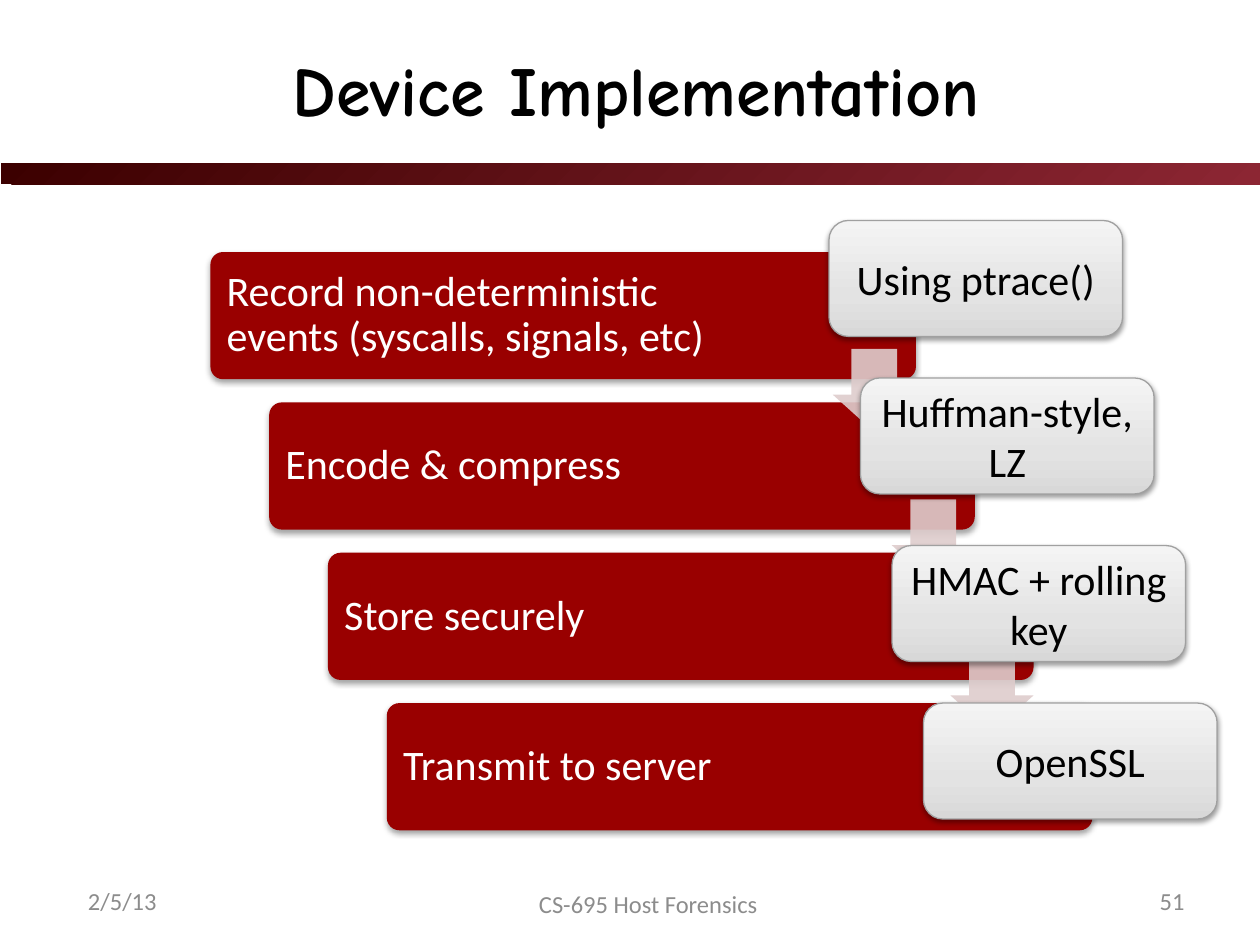
from dataclasses import dataclass

import pptx
import pptx.dml.color
import pptx.enum.shapes
import pptx.enum.text
import pptx.oxml
import pptx.oxml.ns
import pptx.util
from pptx.util import Inches

SHAPE = pptx.enum.shapes.MSO_SHAPE
ALIGN = pptx.enum.text.PP_ALIGN
COLORS = {
    "black": "000000",
    "white": "FFFFFF",
    "step": "990000",
    "arrow": "DECCCC",
    "footer": "8C8C8C",
    "note_line": "A0A0A0",
}
BAND_STOPS = [(0, "3C0000"), (100, "8C2633")]
NOTE_STOPS = [(0, "D8D8D8"), (35, "E3E3E3"), (100, "F4F4F4")]


@dataclass
class Area:
    left: float
    top: float
    width: float
    height: float

    def lengths(self) -> list:
        return [Inches(v) for v in (self.left, self.top, self.width, self.height)]


@dataclass
class Label:
    text: str
    area: Area
    size: int
    color: str
    align: object
    font: str = "Calibri"
    bold: bool = False


@dataclass
class Stage:
    step: str
    note: str
    note_top: float


STAGES = [
    Stage("Record non-deterministic events (syscalls, signals, etc)", "Using ptrace()", 1.75),
    Stage("Encode & compress", "Huffman-style, LZ", 3),
    Stage("Store securely", "HMAC + rolling key", 4.33),
    Stage("Transmit to server", "OpenSSL", 5.58),
]
LABELS = [
    Label("Device Implementation", Area(0.6, 0.15, 8.9, 1.1), 40, "black",
          ALIGN.CENTER, "Comic Neue", True),
    Label("2/5/13", Area(0.6, 6.95, 1.83, 0.4), 14, "footer", ALIGN.LEFT),
    Label("CS-695 Host Forensics", Area(3.9, 6.97, 2.49, 0.4), 14, "footer", ALIGN.CENTER),
    Label("51", Area(7.67, 6.95, 1.83, 0.4), 14, "footer", ALIGN.RIGHT),
]
STEP_LEFT, STEP_TOP = 1.67, 2
STEP_RIGHT, STEP_DOWN = 1.4 / 3, 3.58 / 3


def rgb(name: str) -> pptx.dml.color.RGBColor:
    return pptx.dml.color.RGBColor.from_string(COLORS[name])


def parse_drawing(markup: str):
    return pptx.oxml.parse_xml(markup.replace(">", f" {pptx.oxml.ns.nsdecls('a')}>", 1))


def write(shape, text: str, size: int, color: str, align, font: str = "Calibri",
          bold: bool = False, spacing: float = 1.0) -> None:
    frame = shape.text_frame
    frame.word_wrap = True
    frame.vertical_anchor = pptx.enum.text.MSO_ANCHOR.MIDDLE
    para = frame.paragraphs[0]
    para.alignment = align
    para.line_spacing = spacing
    span = para.add_run()
    span.text = text
    span.font.color.rgb = rgb(color)
    formats = {"name": font, "size": pptx.util.Pt(size), "bold": bold}
    for attribute, value in formats.items():
        setattr(span.font, attribute, value)


def add_plain(page, kind, area: Area, fill: str, adjustments: tuple = ()):
    shape = page.shapes.add_shape(kind, *area.lengths())
    shape.shadow.inherit = False
    shape.fill.solid()
    shape.fill.fore_color.rgb = rgb(fill)
    shape.line.fill.background()
    for index, value in enumerate(adjustments):
        shape.adjustments[index] = value
    return shape


def set_gradient(shape, stops: list, angle: int) -> None:
    marks = "".join(
        f'<a:gs pos="{position * 1000}"><a:srgbClr val="{color}"/></a:gs>'
        for position, color in stops
    )
    gradient = parse_drawing(
        f'<a:gradFill rotWithShape="1"><a:gsLst>{marks}</a:gsLst>'
        f'<a:lin ang="{angle * 60000}" scaled="0"/></a:gradFill>'
    )
    solid = shape.fill._xPr.find(pptx.oxml.ns.qn("a:solidFill"))
    solid.getparent().replace(solid, gradient)


def set_shadow(shape, opacity: int, distance: float) -> None:
    effects = shape._element.spPr.find(pptx.oxml.ns.qn("a:effectLst"))
    effects.append(parse_drawing(
        f'<a:outerShdw blurRad="{pptx.util.Pt(3.1)}" dist="{pptx.util.Pt(distance)}" '
        f'dir="5400000" rotWithShape="0"><a:srgbClr val="{COLORS["black"]}">'
        f'<a:alpha val="{opacity * 1000}"/></a:srgbClr></a:outerShdw>'
    ))


def add_band(page) -> None:
    band = add_plain(page, SHAPE.RECTANGLE, Area(4.92, -3.62, 0.17, 10), "step")
    band.rotation = 90
    set_gradient(band, BAND_STOPS, 315)


def add_label(page, label: Label) -> None:
    box = page.shapes.add_textbox(*label.area.lengths())
    write(box, label.text, label.size, label.color, label.align, label.font, label.bold)


def add_step(page, index: int, text: str) -> None:
    left, top = STEP_LEFT + index * STEP_RIGHT, STEP_TOP + index * STEP_DOWN
    card = add_plain(page, SHAPE.ROUNDED_RECTANGLE, Area(left, top, 5.6, 1.01), "step", (0.1,))
    set_shadow(card, 35, 1.8)
    box = page.shapes.add_textbox(*Area(left + 0.03, top + 0.03, 4.42, 0.95).lengths())
    for side in ("left", "top", "right", "bottom"):
        setattr(box.text_frame, f"margin_{side}", Inches(0.1))
    write(box, text, 24, "white", ALIGN.LEFT, spacing=0.9)


def add_arrow(page, index: int) -> None:
    area = Area(6.61 + index * STEP_RIGHT, 2.77 + index * STEP_DOWN, 0.66, 0.66)
    arrow = add_plain(page, SHAPE.DOWN_ARROW, area, "arrow", (0.55, 0.45))
    color = arrow.fill._xPr.find(pptx.oxml.ns.qn("a:solidFill"))[0]
    color.append(parse_drawing('<a:alpha val="90000"></a:alpha>'))


def add_note(page, index: int, stage: Stage) -> None:
    area = Area(6.58 + index * 0.25, stage.note_top, 2.33, 0.92)
    note = add_plain(page, SHAPE.ROUNDED_RECTANGLE, area, "white")
    set_gradient(note, NOTE_STOPS, 270)
    note.line.color.rgb = rgb("note_line")
    note.line.width = pptx.util.Pt(0.75)
    set_shadow(note, 38, 1.6)
    write(note, stage.note, 24, "black", ALIGN.CENTER)


def main() -> None:
    deck = pptx.Presentation()
    deck.slide_width, deck.slide_height = Inches(10), Inches(7.5)
    page = deck.slides.add_slide(deck.slide_layouts[6])
    add_band(page)
    for label in LABELS:
        add_label(page, label)
    for index, stage in enumerate(STAGES):
        add_step(page, index, stage.step)
    for index in range(len(STAGES) - 1):
        add_arrow(page, index)
    for index, stage in enumerate(STAGES):
        add_note(page, index, stage)
    deck.save("out.pptx")


if __name__ == "__main__":
    main()
